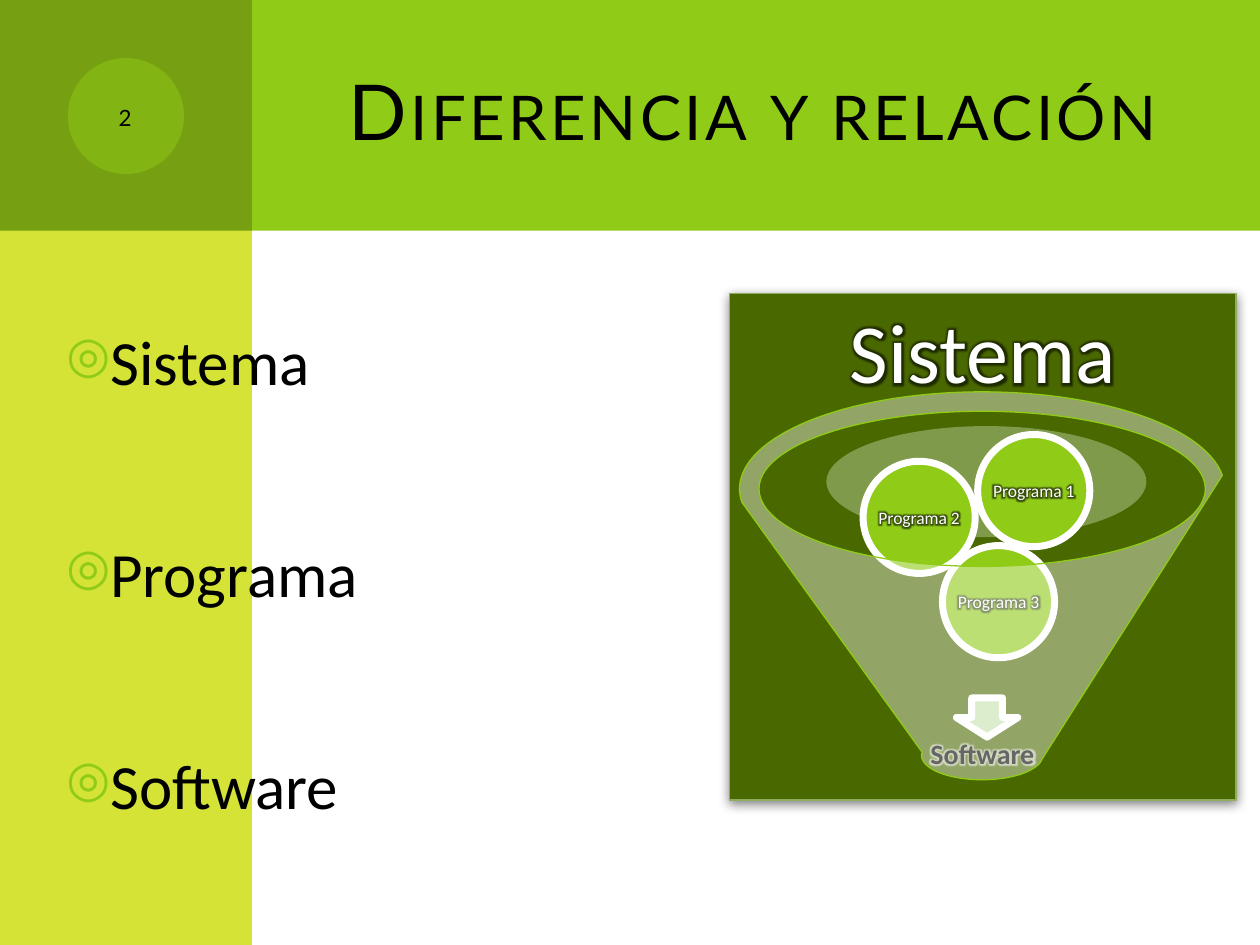
"""Build the slide on how system, program and software differ and relate."""
from dataclasses import dataclass

from lxml import etree
from pptx import Presentation
from pptx import util as u
from pptx.dml.color import RGBColor
from pptx.enum import shapes, text
from pptx.oxml import ns

Kind = shapes.MSO_SHAPE
Anchor = text.MSO_ANCHOR
Align = text.PP_ALIGN


@dataclass(frozen=True)
class Theme:
    heading: str = "Lato"
    body: str = "Calibri"
    green: str = "8FCB17"
    lime: str = "D4E336"
    olive: str = "769F11"
    forest: str = "4A6800"
    moss: str = "8DAE5C"
    mist: str = "D1E7BD"
    pale: str = "C6E2AC"
    white: str = "FFFFFF"
    black: str = "000000"
    title_size: int = 44
    system_size: int = 48
    term_size: int = 36
    label_size: int = 16
    ball_size: int = 10


theme = Theme()
deck = Presentation()
deck.slide_width, deck.slide_height = u.Cm(25.4), u.Cm(19.05)
slide = deck.slides.add_slide(deck.slide_layouts[6])


def draw(kind, box, fill, line=None, width=0.75, alpha=None):
    """Add a filled shape, or a wrapping text box when kind is None."""
    place = [u.Cm(length) for length in box]
    if kind is None:
        label = slide.shapes.add_textbox(*place)
        label.text_frame.word_wrap = True
        return label
    shape = slide.shapes.add_shape(kind, *place)
    shape.shadow.inherit = False
    shape.fill.solid()
    shape.fill.fore_color.rgb = RGBColor.from_string(fill)
    if alpha:
        tint = shape.fill._xPr.find(".//" + ns.qn("a:srgbClr"))
        etree.SubElement(tint, ns.qn("a:alpha"), val=str(alpha * 1000))
    if line:
        shape.line.color.rgb = RGBColor.from_string(line)
        shape.line.width = u.Pt(width)
    else:
        shape.line.fill.background()
    return shape


def write(shape, words, size, color, font=theme.body, anchor=Anchor.MIDDLE,
          align=Align.CENTER, glow=None, inset=None, **marks):
    """Set the words of a shape and format every run."""
    frame = shape.text_frame
    frame.text = words
    frame.vertical_anchor = anchor
    if inset is not None:
        frame.margin_left = frame.margin_right = u.Cm(inset)
        frame.margin_top = frame.margin_bottom = u.Cm(inset)
    for paragraph in frame.paragraphs:
        paragraph.alignment = align
        for run in paragraph.runs:
            run.font.size = u.Pt(size)
            run.font.name = font
            run.font.color.rgb = RGBColor.from_string(color)
            props = run.font._element
            for mark, value in marks.items():
                props.set(mark, value)
            if glow:
                effects = etree.Element(ns.qn("a:effectLst"))
                halo = etree.SubElement(effects, ns.qn("a:glow"), rad="63500")
                tint = etree.SubElement(halo, ns.qn("a:srgbClr"), val=glow)
                etree.SubElement(tint, ns.qn("a:alpha"), val="60000")
                props.find(ns.qn("a:solidFill")).addnext(effects)
    return frame


band, side = 4.65, 5.08
draw(Kind.RECTANGLE, (1.27, 0, 24.13, band), theme.green)
draw(Kind.RECTANGLE, (0, 0, side, 19.05), theme.lime)
draw(Kind.RECTANGLE, (0, 0, side, band), theme.olive)
draw(Kind.OVAL, (1.37, 1.17, 2.34, 2.34), theme.green, alpha=50)

system = draw(Kind.RECTANGLE, (14.71, 5.92, 10.21, 10.21), theme.forest, theme.moss)
write(system, "Sistema", theme.system_size, theme.white, anchor=Anchor.TOP,
      glow=theme.black)
shadow = etree.SubElement(
    system._element.spPr.find(ns.qn("a:effectLst")), ns.qn("a:outerShdw"),
    blurRad=str(u.Pt(6)), dist=str(u.Pt(2)), dir="5400000", rotWithShape="0")
shade = etree.SubElement(shadow, ns.qn("a:srgbClr"), val=theme.black)
etree.SubElement(shade, ns.qn("a:alpha"), val="50000")

title = draw(None, (6.78, 0.63, 17.35, 3.18), None)
write(title, "Diferencia y relación", theme.title_size, theme.black,
      theme.heading, cap="small", spc="200")

terms = draw(None, (1.09, 6.38, 13.92, 10.64), None)
listing = write(terms, "Sistema\nPrograma\nSoftware", theme.term_size, theme.black,
                anchor=Anchor.TOP, align=Align.LEFT)
for position, term in enumerate(listing.paragraphs):
    term.space_before = u.Pt(78 if position else 0)
    props = term._p.get_or_add_pPr()
    props.set("marL", str(u.Cm(0.83)))
    props.set("indent", str(-u.Cm(0.83)))
    bullet_color = etree.SubElement(props, ns.qn("a:buClr"))
    etree.SubElement(bullet_color, ns.qn("a:srgbClr"), val=theme.green)
    etree.SubElement(props, ns.qn("a:buSzPct"), val="80000")
    etree.SubElement(props, ns.qn("a:buChar"), char="◎")

draw(Kind.OVAL, (16.66, 8.59, 6.45, 2.24), theme.mist, alpha=40)
draw(Kind.DOWN_ARROW, (19.28, 14.07, 1.24, 0.79), theme.pale, theme.white, 4)
software = draw(None, (16.81, 14.43, 5.99, 1.5), None)
write(software, "Software", theme.label_size, theme.black, glow=theme.white,
      inset=0.3, b="1")

programs = {"Programa 3": (19, 11), "Programa 2": (17.4, 9.3), "Programa 1": (19.71, 8.76)}
for name, corner in programs.items():
    ball = draw(Kind.OVAL, (*corner, 2.26, 2.26), theme.green, theme.white, 4)
    write(ball, name, theme.ball_size, theme.white, glow=theme.black,
          inset=0.03).word_wrap = False

draw(Kind.FUNNEL, (14.91, 7.9, 9.78, 7.82), theme.white, theme.green, alpha=40)

number = draw(None, (1.47, 1.47, 2.11, 1.7), None)
write(number, "2", theme.label_size, theme.black, theme.heading, cap="small")

deck.save("out.pptx")
